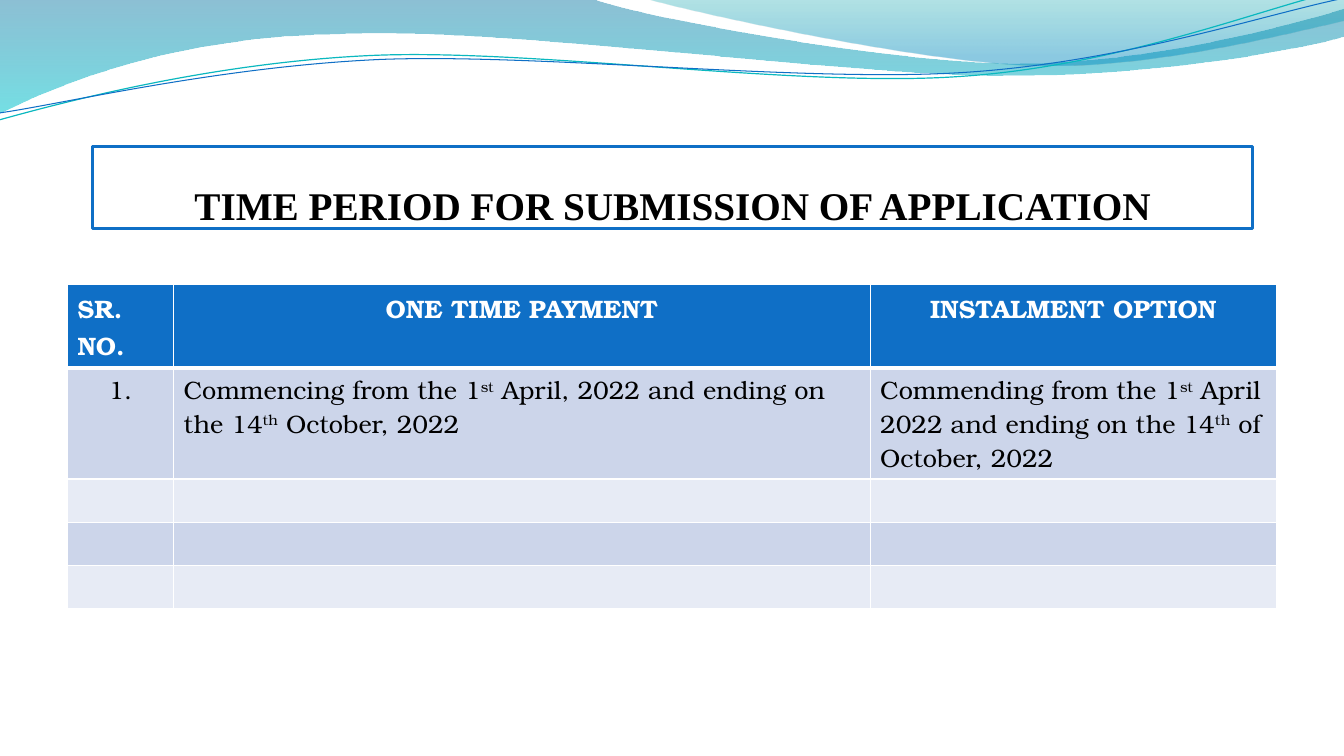
from lxml.etree import SubElement
from pptx import Presentation
from pptx.dml.color import RGBColor
from pptx.enum.text import MSO_ANCHOR as Anchor, MSO_AUTO_SIZE as AutoSize, PP_ALIGN as Align
from pptx.oxml.ns import qn
from pptx.util import Inches, Pt

HEADER_BLUE, BAND_DARK, BAND_LIGHT = "0F6FC6", "CCD5EA", "E7EBF5"
WHITE, BLACK = "FFFFFF", "000000"
TABLE_FONT = "TeX Gyre Bonum"

FILLED_WAVES = [
    ([(0, 0), (5.87, -0.01),
      [(6.34, 0.17), (8.85, 0.63), (10.11, 0.63)],
      [(11.38, 0.63), (12.78, 0.26), (13.33, 0.09)],
      (13.35, 0.36),
      [(13.11, 0.44), (11.6, 0.76), (9.94, 0.75)],
      [(8.29, 0.75), (5.09, 0.28), (3.43, 0.34)],
      [(1.72, 0.36), (0.61, 0.83), (-0.01, 1.13)]],
     [(0, "0074A1", 45), (100, "00C6CF", 55)]),
    ([(6.39, -0.01),
      [(6.79, 0.11), (9.09, 0.62), (10.25, 0.65)],
      [(11.41, 0.69), (12.82, 0.32), (13.33, 0.21)],
      (13.33, 0)],
     [(0, "00A1A9", 30), (80, "008BBF", 45)]),
]
LINE_WAVES = [
    ([(-0.01, 1.19),
      [(0.64, 1.01), (2.11, 0.62), (3.69, 0.55)],
      [(5.27, 0.48), (7.9, 0.87), (9.5, 0.76)],
      [(11.1, 0.66), (12.52, 0.08), (13.31, -0.1)]], "0AB8BF", 0.85),
    ([(0, 1.12),
      [(0.63, 1.03), (2.18, 0.66), (3.78, 0.59)],
      [(5.37, 0.53), (7.96, 0.82), (9.55, 0.72)],
      [(11.15, 0.62), (12.55, 0.14), (13.34, -0.02)]], HEADER_BLUE, 0.75),
]

COLUMN_WIDTHS = [1.05, 6.91, 4.03]
ROW_HEIGHTS = [0.82, 1.1, 0.43, 0.43, 0.43]
HEADINGS = [["SR. NO."], ["ONE TIME PAYMENT"], ["INSTALMENT OPTION"]]
PERIODS = [
    ["1."],
    ["Commencing from the 1", "st", " April, 2022 and ending on the 14", "th", " October, 2022"],
    ["Commending from the 1", "st", " April 2022 and ending on the 14", "th", " of October, 2022"],
]


def rgb(color):
    """Turn a hex string into a colour."""
    return RGBColor.from_string(color)


def set_format(target, values):
    """Set each named attribute on the target."""
    for name, value in values.items():
        setattr(target, name, value)


def set_font(font, color, **values):
    """Colour a font and set its other values."""
    font.color.rgb = rgb(color)
    set_format(font, values)


def bend_lines(shape, segments):
    """Merge the three straight steps of each curve into one cubic curve."""
    steps = iter(list(shape._element.iter(qn("a:lnTo"))))
    for segment in segments:
        first = next(steps)
        if isinstance(segment, list):
            curve = first.makeelement(qn("a:cubicBezTo"))
            first.addprevious(curve)
            for step in (first, next(steps), next(steps)):
                curve.append(step[0])
                step.getparent().remove(step)


def add_wave(slide, segments, closed):
    """Draw an outline of straight segments and cubic curves."""
    points = []
    for segment in segments:
        points.extend(segment if isinstance(segment, list) else [segment])
    points = [(Inches(x), Inches(y)) for x, y in points]
    builder = slide.shapes.build_freeform(*points[0])
    builder.add_line_segments(points[1:], close=closed)
    shape = builder.convert_to_shape()
    bend_lines(shape, segments[1:])
    shape.shadow.inherit = False
    return shape


def add_filled_wave(slide, segments, stops):
    """Draw a wave with a translucent vertical gradient."""
    shape = add_wave(slide, segments, True)
    shape.line.fill.background()
    shape.fill.gradient()
    gradient = shape._element.spPr.find(qn("a:gradFill"))
    stop_list = gradient.find(qn("a:gsLst"))
    for old_stop in list(stop_list):
        stop_list.remove(old_stop)
    for position, color, opacity in stops:
        stop = SubElement(stop_list, qn("a:gs"), pos=str(position * 1000))
        solid = SubElement(stop, qn("a:srgbClr"), val=color)
        SubElement(solid, qn("a:alpha"), val=str(opacity * 1000))
    gradient.find(qn("a:lin")).set("ang", "5400000")


def add_line_wave(slide, segments, color, width):
    """Draw a thin open wave."""
    shape = add_wave(slide, segments, False)
    shape.fill.background()
    shape.line.color.rgb = rgb(color)
    shape.line.width = Pt(width)


def format_title(title, text):
    """Place the title in its outlined box."""
    set_format(title, {"left": Inches(0.92), "top": Inches(1.45),
                       "width": Inches(11.5), "height": Inches(0.82)})
    title.fill.solid()
    title.fill.fore_color.rgb = rgb(WHITE)
    title.line.color.rgb = rgb(HEADER_BLUE)
    title.line.width = Pt(2)
    set_format(title.text_frame, {
        "text": text, "word_wrap": True, "auto_size": AutoSize.NONE,
        "vertical_anchor": Anchor.BOTTOM, "margin_left": 0, "margin_right": 0,
        "margin_top": Inches(0.05), "margin_bottom": 0})
    paragraph = title.text_frame.paragraphs[0]
    paragraph.alignment = Align.CENTER
    set_font(paragraph.runs[0].font, BLACK, name="Times New Roman", size=Pt(28), bold=True)


def style_cell(cell, color, bottom):
    """Give a cell white borders and a plain fill."""
    properties = cell._tc.get_or_add_tcPr()
    for side, width in {"L": 1, "R": 1, "T": 1, "B": bottom}.items():
        line = SubElement(properties, qn(f"a:ln{side}"), w=str(Pt(width)))
        fill = SubElement(line, qn("a:solidFill"))
        SubElement(fill, qn("a:srgbClr"), val=WHITE)
    cell.fill.solid()
    cell.fill.fore_color.rgb = rgb(color)


def write_cell(cell, pieces, alignment, color, bold):
    """Write text whose every second piece is superscript."""
    paragraph = cell.text_frame.paragraphs[0]
    paragraph.alignment = alignment
    for index, piece in enumerate(pieces):
        run = paragraph.add_run()
        run.text = piece
        set_font(run.font, color, name=TABLE_FONT, size=Pt(18), bold=bold)
        if index % 2:
            run._r.get_or_add_rPr().set("baseline", "30000")


def add_period_table(slide):
    """Add the table of application periods."""
    table = slide.shapes.add_table(
        len(ROW_HEIGHTS), len(COLUMN_WIDTHS), Inches(0.67), Inches(2.82),
        Inches(sum(COLUMN_WIDTHS)), Inches(sum(ROW_HEIGHTS))).table
    for column, width in zip(table.columns, COLUMN_WIDTHS):
        column.width = Inches(width)
    for index, (row, height) in enumerate(zip(table.rows, ROW_HEIGHTS)):
        row.height = Inches(height)
        band = BAND_DARK if index % 2 else BAND_LIGHT
        for cell in row.cells:
            style_cell(cell, band if index else HEADER_BLUE, 1 if index else 3)
    left, center = Align.LEFT, Align.CENTER
    for column, alignment in enumerate([left, center, center]):
        write_cell(table.cell(0, column), HEADINGS[column], alignment, WHITE, True)
    for column, alignment in enumerate([center, left, left]):
        write_cell(table.cell(1, column), PERIODS[column], alignment, BLACK, False)


def main():
    """Build and save the slide."""
    presentation = Presentation()
    set_format(presentation, {"slide_width": Inches(13.33), "slide_height": Inches(7.5)})
    slide = presentation.slides.add_slide(presentation.slide_layouts[5])
    for segments, stops in FILLED_WAVES:
        add_filled_wave(slide, segments, stops)
    for segments, color, width in LINE_WAVES:
        add_line_wave(slide, segments, color, width)
    format_title(slide.shapes.title, "TIME PERIOD FOR SUBMISSION OF APPLICATION")
    add_period_table(slide)
    presentation.save("out.pptx")


if __name__ == "__main__":
    main()
